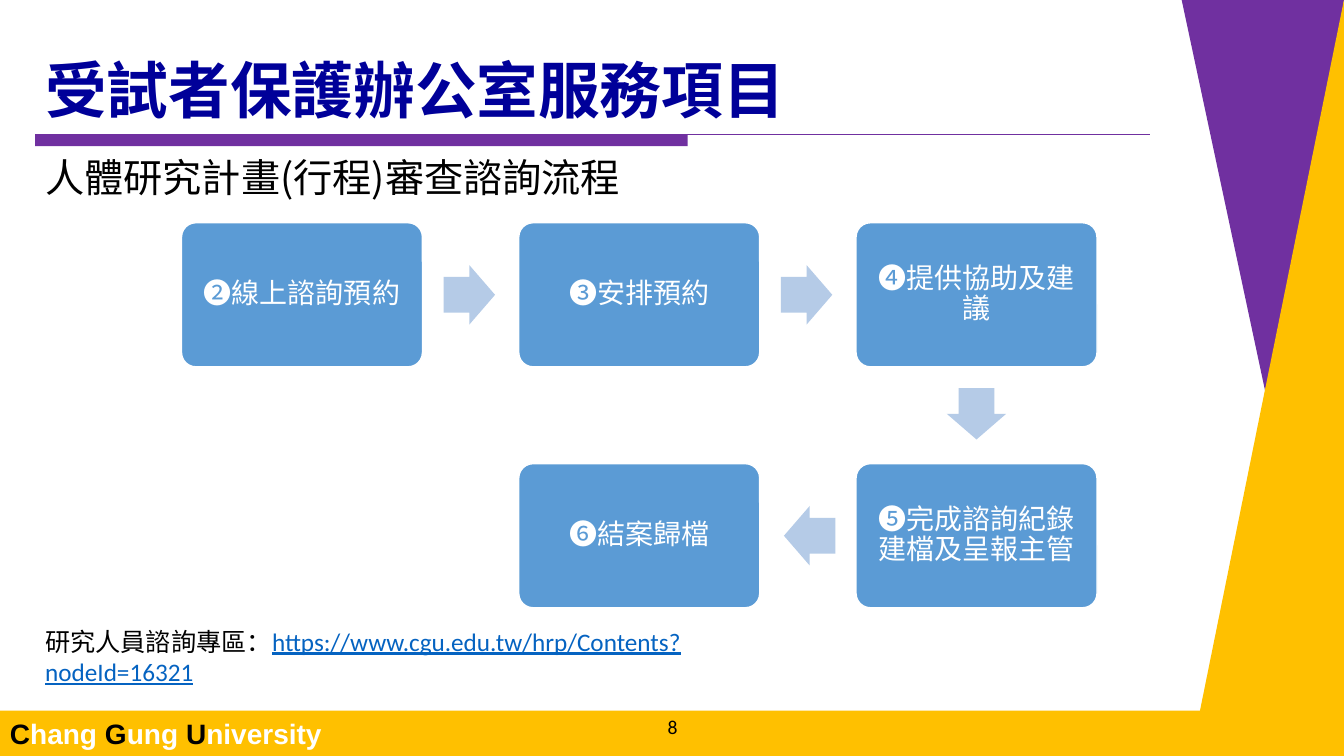
import pptx
import pptx.dml.color
import pptx.enum.shapes
import pptx.enum.text
import pptx.oxml
import pptx.oxml.ns
import pptx.util
from lxml import etree

Inches = pptx.util.Inches
Pt = pptx.util.Pt
RGBColor = pptx.dml.color.RGBColor
Shape = pptx.enum.shapes.MSO_SHAPE
Align = pptx.enum.text.PP_ALIGN
Anchor = pptx.enum.text.MSO_ANCHOR
qn = pptx.oxml.ns.qn

PURPLE = RGBColor(0x70, 0x30, 0xA0)
GOLD = RGBColor(0xFF, 0xC0, 0x00)
NAVY = RGBColor(0x00, 0x00, 0x99)
BLUE = RGBColor(0x5B, 0x9B, 0xD5)
PALE_BLUE = RGBColor(0xB5, 0xCB, 0xE7)
LINK_BLUE = RGBColor(0x05, 0x63, 0xC1)
BLACK = RGBColor(0x00, 0x00, 0x00)
WHITE = RGBColor(0xFF, 0xFF, 0xFF)


class SlideBuilder:
    """Draws styled elements on one slide."""

    title_font = "Noto Sans CJK SC"
    step_font = "Noto Sans CJK JP"
    latin_font = "Calibri"

    def __init__(self, presentation):
        self.slide = presentation.slides.add_slide(presentation.slide_layouts[1])
        self.shapes = self.slide.shapes

    def style(self, paragraph, size, name, color=None, bold=False, align=Align.LEFT, east_asian=None):
        paragraph.alignment = align
        font = paragraph.font
        font.size, font.name, font.bold = Pt(size), name, bold
        if color is not None:
            font.color.rgb = color
        properties = paragraph._p.pPr.find(qn("a:defRPr"))
        etree.SubElement(properties, qn("a:ea")).set("typeface", east_asian or name)

    def runs(self, paragraph, parts):
        for text, color in parts:
            run = paragraph.add_run()
            run.text = text
            run.font.color.rgb = color
        return run

    def paint(self, shape, fill, line=None):
        shape.shadow.inherit = False
        shape.fill.solid()
        shape.fill.fore_color.rgb = fill
        if line is None:
            shape.line.fill.background()
        else:
            shape.line.color.rgb = line
            shape.line.width = Pt(1)
        return shape

    def polygon(self, points, fill):
        corners = [(Inches(x), Inches(y)) for x, y in points]
        builder = self.shapes.build_freeform(*corners[0])
        builder.add_line_segments(corners[1:], close=True)
        self.paint(builder.convert_to_shape(), fill)

    def preset(self, kind, box, fill, line=None):
        shape = self.shapes.add_shape(kind, *map(Inches, box))
        return self.paint(shape, fill, line)

    def rule(self, left, right, top):
        connector = self.shapes.add_connector(
            pptx.enum.shapes.MSO_CONNECTOR.STRAIGHT,
            Inches(left), Inches(top), Inches(right), Inches(top))
        connector.line.color.rgb = PURPLE
        connector.line.width = Pt(0.75)
        etree.SubElement(connector._element.spPr, qn("a:effectLst"))

    def placeholder(self, index, box, text, size, color, bold, anchor):
        shape = self.slide.placeholders[index]
        shape.left, shape.top, shape.width, shape.height = map(Inches, box)
        frame = shape.text_frame
        frame.auto_size = pptx.enum.text.MSO_AUTO_SIZE.NONE
        frame.vertical_anchor = anchor
        frame.text = text
        paragraph = frame.paragraphs[0]
        paragraph.space_before = Pt(0)
        if index:
            properties = paragraph._p.get_or_add_pPr()
            properties.set("marL", "0")
            properties.set("indent", "0")
            etree.SubElement(properties, qn("a:buNone"))
        else:
            paragraph.line_spacing = 0.9
        self.style(paragraph, size, self.title_font, color, bold)

    def text_box(self, box, anchor):
        frame = self.shapes.add_textbox(*map(Inches, box)).text_frame
        frame.word_wrap = True
        frame.vertical_anchor = anchor
        return frame.paragraphs[0]

    def step(self, left, top, text):
        shape = self.preset(Shape.ROUNDED_RECTANGLE, (left, top, 2.39, 1.43), BLUE, WHITE)
        shape.adjustments[0] = 0.1
        frame = shape.text_frame
        frame.word_wrap = True
        frame.vertical_anchor = Anchor.MIDDLE
        frame.margin_left = frame.margin_right = Inches(0.08)
        frame.margin_top = frame.margin_bottom = Inches(0.08)
        frame.text = text
        paragraph = frame.paragraphs[0]
        paragraph.line_spacing = 0.9
        self.style(paragraph, 20, self.step_font, WHITE, align=Align.CENTER)

    def arrow(self, left, top, rotation):
        shape = self.preset(Shape.RIGHT_ARROW, (left, top, 0.51, 0.59), PALE_BLUE)
        shape.adjustments[0] = 0.6
        shape.adjustments[1] = 0.5
        shape.rotation = rotation

    def footer(self, text, page):
        bar = self.preset(Shape.RECTANGLE, (0, 7.05, 13.33, 0.45), GOLD)
        bar.text_frame.vertical_anchor = Anchor.MIDDLE
        paragraph = bar.text_frame.paragraphs[0]
        self.style(paragraph, 20, "Arial", bold=True)
        for word in text.split():
            ending = "" if text.endswith(word) else " "
            self.runs(paragraph, [(word[0], BLACK), (word[1:] + ending, WHITE)])
        number = self.text_box((5.29, 7.07, 2.76, 0.28), Anchor.MIDDLE)
        number.text = page
        self.style(number, 14, self.latin_font, BLACK, align=Align.CENTER)

    def link_line(self, box, label, address):
        paragraph = self.text_box(box, Anchor.TOP)
        self.style(paragraph, 18, self.latin_font, east_asian=self.title_font)
        link = self.runs(paragraph, [(label, BLACK), (address, LINK_BLUE)])
        link.font.underline = True


def main():
    presentation = pptx.Presentation()
    presentation.slide_width = Inches(13.33)
    presentation.slide_height = Inches(7.5)
    builder = SlideBuilder(presentation)

    builder.polygon([(13.33, 0), (11.72, 0), (12.67, 4.45)], PURPLE)
    builder.polygon([(13.33, 0), (11.9, 7.06), (13.33, 7.06)], GOLD)
    builder.footer("Chang Gung University", "8")
    builder.preset(Shape.RECTANGLE, (0.35, 1.33, 6.47, 0.12), PURPLE)
    builder.rule(0.35, 11.41, 1.33)

    builder.placeholder(0, (0.35, 0.4, 11.06, 0.91), "受試者保護辦公室服務項目",
                        44, NAVY, True, Anchor.BOTTOM)
    builder.placeholder(1, (0.35, 1.47, 11.06, 0.65), "人體研究計畫(行程)審查諮詢流程",
                        28, BLACK, False, Anchor.TOP)

    columns = [1.8 + 3.345 * index for index in range(3)]
    rows = [2.21, 4.6]
    steps = [
        (0, 0, "❷線上諮詢預約"),
        (1, 0, "❸安排預約"),
        (2, 0, "❹提供協助及建議"),
        (2, 1, "❺完成諮詢紀錄建檔及呈報主管"),
        (1, 1, "❻結案歸檔"),
    ]
    for column, row, text in steps:
        builder.step(columns[column], rows[row], text)

    for left in columns[:2]:
        builder.arrow(left + 2.6, rows[0] + 0.42, 0)
    builder.arrow(columns[2] + 0.94, 3.81, 90)
    builder.arrow(columns[1] + 2.63, rows[1] + 0.42, 180)

    builder.link_line((0.35, 6.16, 6.67, 0.8), "研究人員諮詢專區：",
                      "https://www.cgu.edu.tw/hrp/Contents?nodeId=16321")
    presentation.save("out.pptx")


if __name__ == "__main__":
    main()
